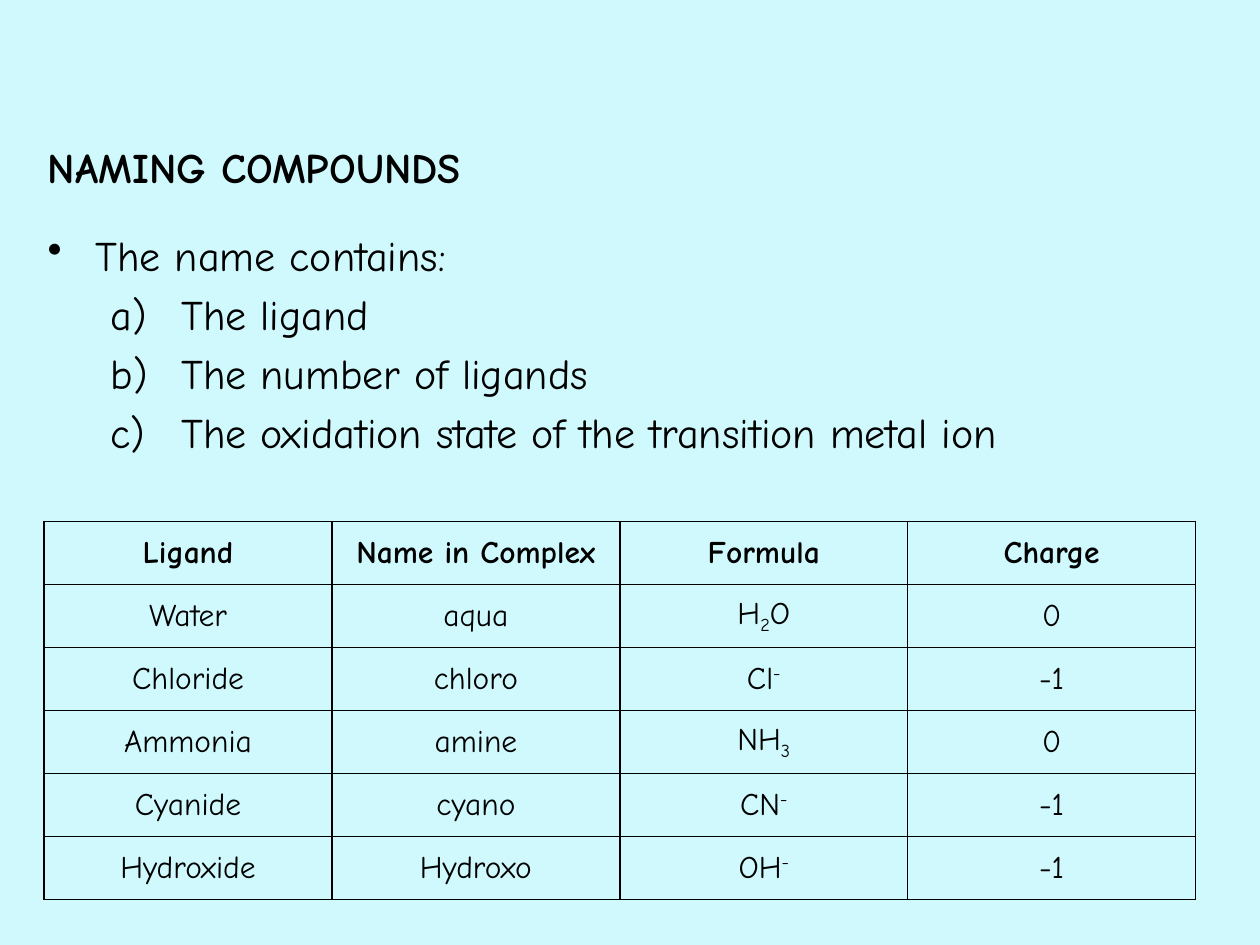
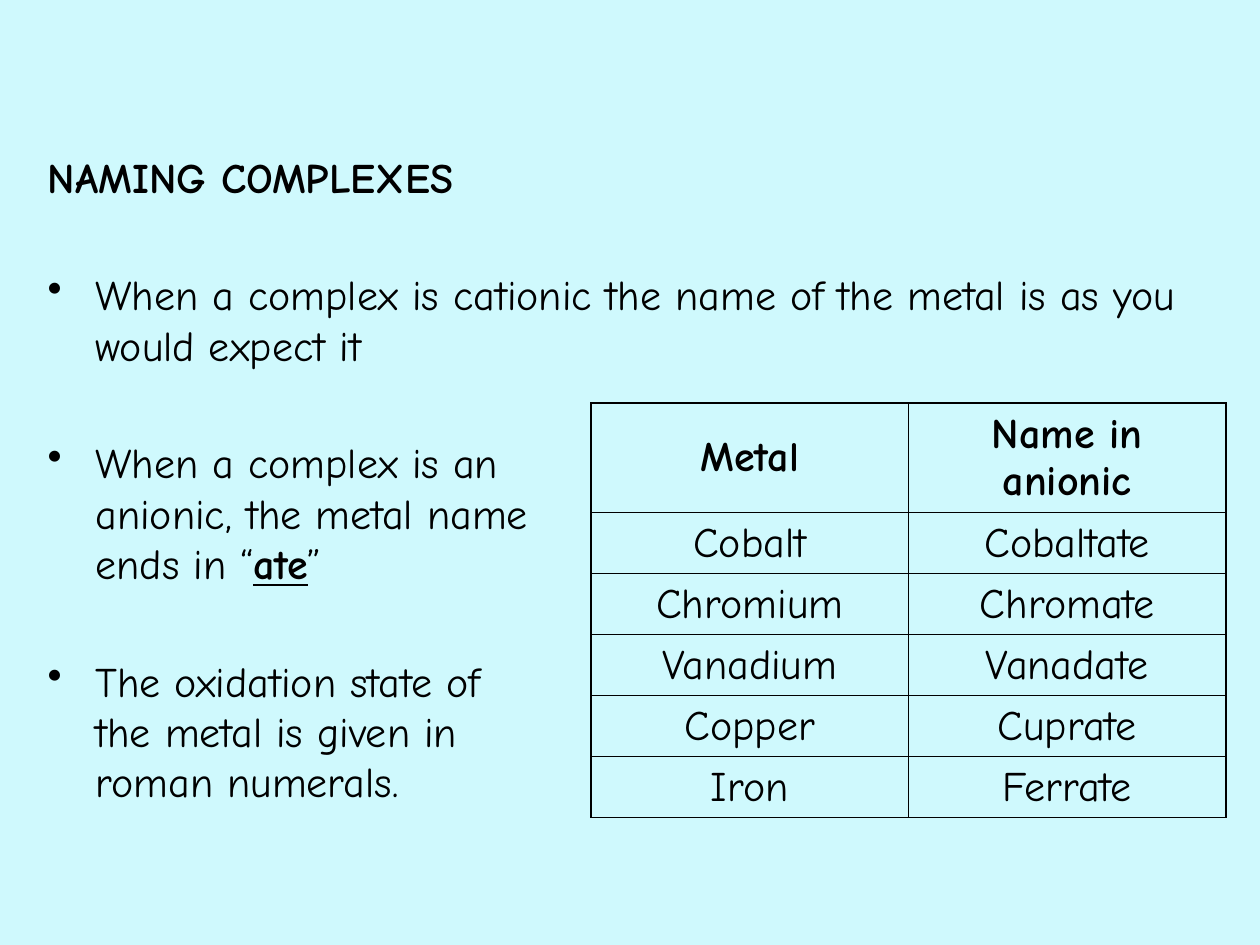
from dataclasses import dataclass

from lxml import etree
from pptx import Presentation
from pptx import util as u
from pptx.dml import color
from pptx.enum import text
from pptx.oxml import ns


@dataclass(frozen=True)
class Theme:
    background: color.RGBColor = color.RGBColor(0xCF, 0xF9, 0xFD)
    ink: color.RGBColor = color.RGBColor(0, 0, 0)
    font: str = "Comic Neue"
    body_size: u.Pt = u.Pt(24)
    small_size: u.Pt = u.Pt(18)
    border: u.Pt = u.Pt(1)


THEME = Theme()


@dataclass(frozen=True)
class Run:
    text: str
    baseline: int = 0
    emphasis: bool = False


Content = str | tuple[Run, ...]


@dataclass(frozen=True)
class Level:
    margin: float
    indent: float
    marker: str = ""
    attribute: str = ""
    value: str = ""


HEADING = Level(0.38, -0.38, "a:buNone")
POINT = Level(0.38, -0.38, "a:buChar", "char", "•")
LETTERED = Level(1.06, -0.56, "a:buAutoNum", "type", "alphaLcParenR")


@dataclass(frozen=True)
class Line:
    content: Content
    level: Level
    space_before: float


@dataclass(frozen=True)
class Grid:
    left: float
    top: float
    width: float
    header_height: float
    row_height: float
    size: u.Pt
    line_spacing: float
    rows: tuple[tuple[Content, ...], ...]


@dataclass(frozen=True)
class Page:
    top: float
    width: float
    lines: tuple[Line, ...]
    grid: Grid


def sub(digit: str) -> Run:
    return Run(digit, -25000)


def anion(symbol: str) -> tuple[Run, ...]:
    return Run(symbol), Run("-", 30000)


PAGES = (
    Page(
        1.07, 9,
        (
            Line("NAMING COMPOUNDS", HEADING, 0),
            Line("The name contains:", POINT, 21.9),
            Line("The ligand", LETTERED, 4.8),
            Line("The number of ligands", LETTERED, 4.8),
            Line("The oxidation state of the transition metal ion", LETTERED, 4.8),
        ),
        Grid(
            0.35, 4.14, 9.14, 0.5, 0.5, THEME.small_size, 1.0,
            (
                ("Ligand", "Name in Complex", "Formula", "Charge"),
                ("Water", "aqua", (Run("H"), sub("2"), Run("O")), "0"),
                ("Chloride", "chloro", anion("Cl"), "-1"),
                ("Ammonia", "amine", (Run("NH"), sub("3")), "0"),
                ("Cyanide", "cyano", anion("CN"), "-1"),
                ("Hydroxide", "Hydroxo", anion("OH"), "-1"),
            ),
        ),
    ),
    Page(
        1.15, 9.53,
        (
            Line("NAMING COMPLEXES", HEADING, 0),
            Line("When a complex is cationic the name of the metal is as you would expect it",
                 POINT, 38.4),
            Line((Run("When a complex is an\nanionic, the metal name\nends in “"),
                  Run("ate", emphasis=True), Run("”")), POINT, 38.4),
            Line("The oxidation state of\nthe metal is given in\nroman numerals.", POINT, 38.4),
        ),
        Grid(
            4.69, 3.2, 5.04, 0.86, 0.48, THEME.body_size, 0.96,
            (
                ("Metal", "Name in anionic"),
                ("Cobalt", "Cobaltate"),
                ("Chromium", "Chromate"),
                ("Vanadium", "Vanadate"),
                ("Copper", "Cuprate"),
                ("Iron", "Ferrate"),
            ),
        ),
    ),
)


def write(paragraph, content: Content, size: u.Pt, bold: bool) -> None:
    font = paragraph.font
    font.name, font.size, font.bold = THEME.font, size, bold
    font.color.rgb = THEME.ink
    for part in (Run(content),) if isinstance(content, str) else content:
        for index, words in enumerate(part.text.split("\n")):
            if index:
                paragraph.add_line_break()
            run = paragraph.add_run()
            run.text = words
            if part.emphasis:
                run.font.bold = run.font.underline = True
            if part.baseline:
                run._r.get_or_add_rPr().set("baseline", str(part.baseline))


def apply_level(paragraph, level: Level) -> None:
    properties = paragraph._p.get_or_add_pPr()
    properties.set("marL", str(u.Inches(level.margin)))
    properties.set("indent", str(u.Inches(level.indent)))
    marker = etree.SubElement(properties, ns.qn(level.marker))
    if level.attribute:
        marker.set(level.attribute, level.value)


def add_lines(slide, page: Page) -> None:
    frame = slide.shapes.add_textbox(
        u.Inches(0.28), u.Inches(page.top), u.Inches(page.width), u.Inches(4.95)
    ).text_frame
    frame.word_wrap = True
    for index, line in enumerate(page.lines):
        paragraph = frame.add_paragraph() if index else frame.paragraphs[0]
        apply_level(paragraph, line.level)
        paragraph.space_before = u.Pt(line.space_before)
        write(paragraph, line.content, THEME.body_size, line.level is HEADING)


def add_borders(cell) -> None:
    properties = cell._tc.get_or_add_tcPr()
    for index, side in enumerate(("a:lnL", "a:lnR", "a:lnT", "a:lnB")):
        edge = etree.Element(ns.qn(side), w=str(THEME.border))
        fill = etree.SubElement(edge, ns.qn("a:solidFill"))
        etree.SubElement(fill, ns.qn("a:srgbClr"), val=str(THEME.ink))
        properties.insert(index, edge)


def add_grid(slide, grid: Grid) -> None:
    row_count, column_count = len(grid.rows), len(grid.rows[0])
    table = slide.shapes.add_table(
        row_count, column_count, u.Inches(grid.left), u.Inches(grid.top),
        u.Inches(grid.width),
        u.Inches(grid.header_height + grid.row_height * (row_count - 1)),
    ).table
    table.first_row = table.horz_banding = False
    for row_index, contents in enumerate(grid.rows):
        header = row_index == 0
        table.rows[row_index].height = u.Inches(
            grid.header_height if header else grid.row_height
        )
        for column_index, content in enumerate(contents):
            cell = table.cell(row_index, column_index)
            cell.fill.background()
            cell.vertical_anchor = text.MSO_ANCHOR.MIDDLE
            add_borders(cell)
            paragraph = cell.text_frame.paragraphs[0]
            paragraph.alignment = text.PP_ALIGN.CENTER
            paragraph.line_spacing = grid.line_spacing
            write(paragraph, content, grid.size, header)


def main() -> None:
    deck = Presentation()
    deck.slide_width, deck.slide_height = u.Inches(10), u.Inches(7.5)
    for page in PAGES:
        slide = deck.slides.add_slide(deck.slide_layouts[6])
        slide.background.fill.solid()
        slide.background.fill.fore_color.rgb = THEME.background
        add_lines(slide, page)
        add_grid(slide, page.grid)
    deck.save("out.pptx")


if __name__ == "__main__":
    main()
